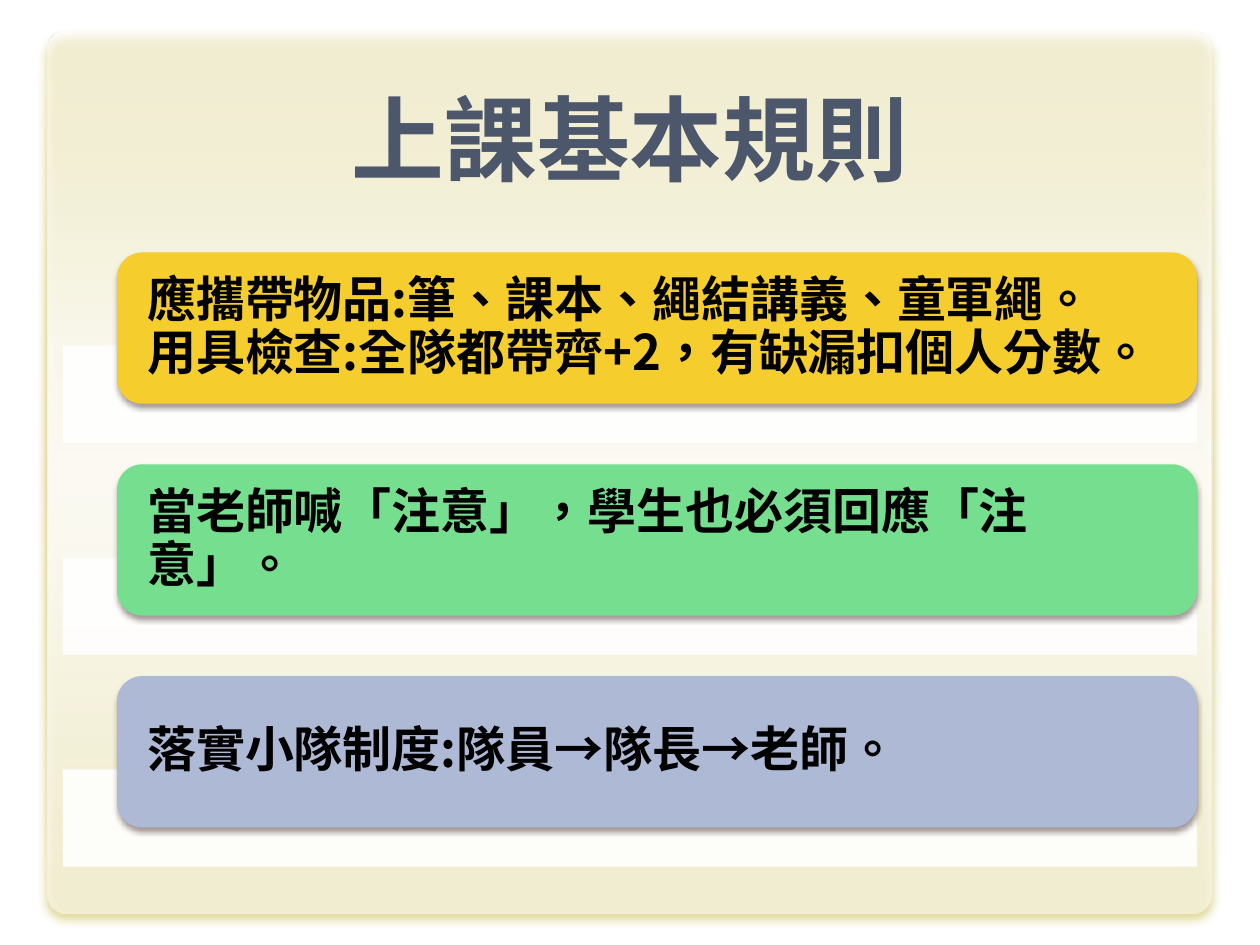
from lxml.etree import SubElement
from pptx import Presentation
from pptx.dml.color import RGBColor
from pptx.enum.shapes import MSO_SHAPE
from pptx.enum.text import MSO_ANCHOR, MSO_AUTO_SIZE, PP_ALIGN
from pptx.oxml.ns import qn
from pptx.util import Cm, Pt

FONT = "Noto Sans CJK SC"
LANGUAGE = "zh-TW"
BLACK = RGBColor(0, 0, 0)
WHITE = RGBColor(255, 255, 255)
SLATE = RGBColor(0x4C, 0x57, 0x6B)
YELLOW = RGBColor(0xF5, 0xCD, 0x2D)
GREEN = RGBColor(0x75, 0xDE, 0x8F)
BLUE = RGBColor(0xAE, 0xBA, 0xD5)
OLIVE_SHADOW = RGBColor(0xC3, 0xB1, 0x31)
DARK_SHADOW = RGBColor(0x1A, 0, 0)

TITLE = "上課基本規則"
RULES = [
    (YELLOW, ["應攜帶物品:筆、課本、繩結講義、童軍繩。",
              "用具檢查:全隊都帶齊+2，有缺漏扣個人分數。"]),
    (GREEN, ["當老師喊「注意」，學生也必須回應「注意」。"]),
    (BLUE, ["落實小隊制度:隊員→隊長→老師。"]),
]
PANEL_STOPS = [(0, 50), (35, 87), (50, 92), (60, 89), (100, 55)]
FIRST_TOP, STEP, BAND_OFFSET = 5.09, 4.27, 1.88


def add_color(parent, color, opacity):
    node = SubElement(parent, qn("a:srgbClr"), val=str(color))
    SubElement(node, qn("a:alpha"), val=str(opacity * 1000))


def add_shadow(shape, color, opacity, blur, distance):
    effects = shape.element.spPr.find(qn("a:effectLst"))
    shadow = SubElement(effects, qn("a:outerShdw"), blurRad=str(Pt(blur)),
                        dist=str(Pt(distance)), dir="5400000", rotWithShape="0")
    add_color(shadow, color, opacity)


def add_block(page, kind, left, top, width, height, color):
    shape = page.shapes.add_shape(kind, Cm(left), Cm(top), Cm(width), Cm(height))
    shape.shadow.inherit = False
    shape.fill.solid()
    shape.fill.fore_color.rgb = color
    shape.line.fill.background()
    return shape


def add_span(para, text, size, color):
    span = para.add_run()
    span.text = text
    span.font.size = Pt(size)
    span.font.bold = True
    span.font.color.rgb = color
    span.font.name = FONT
    properties = span.font._element
    properties.set("lang", LANGUAGE)
    SubElement(properties, qn("a:ea"), typeface=FONT)


def add_panel(page):
    panel = add_block(page, MSO_SHAPE.ROUNDED_RECTANGLE, 0.96, 0.64, 23.48, 17.78, WHITE)
    panel.adjustments[0] = 0.022
    panel.fill.gradient()
    panel.fill.gradient_angle = 270
    stops = panel.element.spPr.find(qn("a:gradFill")).find(qn("a:gsLst"))
    for stop in list(stops):
        stops.remove(stop)
    for position, opacity in PANEL_STOPS:
        add_color(SubElement(stops, qn("a:gs"), pos=str(position * 1000)), WHITE, opacity)
    add_shadow(panel, OLIVE_SHADOW, 90, 5, 3.6)
    page.shapes.element.insert(2, panel.element)


def add_title(page):
    title = page.shapes.title
    title.left, title.top, title.width, title.height = Cm(1.27), Cm(0.84), Cm(22.86), Cm(3.18)
    frame = title.text_frame
    frame.auto_size = MSO_AUTO_SIZE.NONE
    frame.vertical_anchor = MSO_ANCHOR.BOTTOM
    para = frame.paragraphs[0]
    para.alignment = PP_ALIGN.CENTER
    add_span(para, TITLE, 53, SLATE)


def add_rule(page, top, color, lines):
    band = add_block(page, MSO_SHAPE.RECTANGLE, 1.27, top + BAND_OFFSET, 22.86, 1.96, WHITE)
    fill_color = band.element.spPr.find(qn("a:solidFill"))[0]
    SubElement(fill_color, qn("a:alpha"), val="90000")

    box = add_block(page, MSO_SHAPE.ROUNDED_RECTANGLE, 2.36, top, 21.77, 3.05, color)
    add_shadow(box, DARK_SHADOW, 40, 3.1, 2)
    frame = box.text_frame
    frame.word_wrap = True
    frame.vertical_anchor = MSO_ANCHOR.MIDDLE
    frame.margin_left = frame.margin_right = Cm(0.46)
    frame.margin_top = frame.margin_bottom = 0
    para = frame.paragraphs[0]
    para.alignment = PP_ALIGN.LEFT
    para.line_spacing = 0.9
    para._p.get_or_add_pPr().set("hangingPunct", "0")
    for index, line in enumerate(lines):
        if index:
            para.add_line_break()
        add_span(para, line, 28, BLACK)


def main():
    deck = Presentation()
    deck.slide_width, deck.slide_height = Cm(25.4), Cm(19.05)
    page = deck.slides.add_slide(deck.slide_layouts[5])
    add_panel(page)
    add_title(page)
    for index, (color, lines) in enumerate(RULES):
        add_rule(page, FIRST_TOP + index * STEP, color, lines)
    deck.save("out.pptx")


if __name__ == "__main__":
    main()
